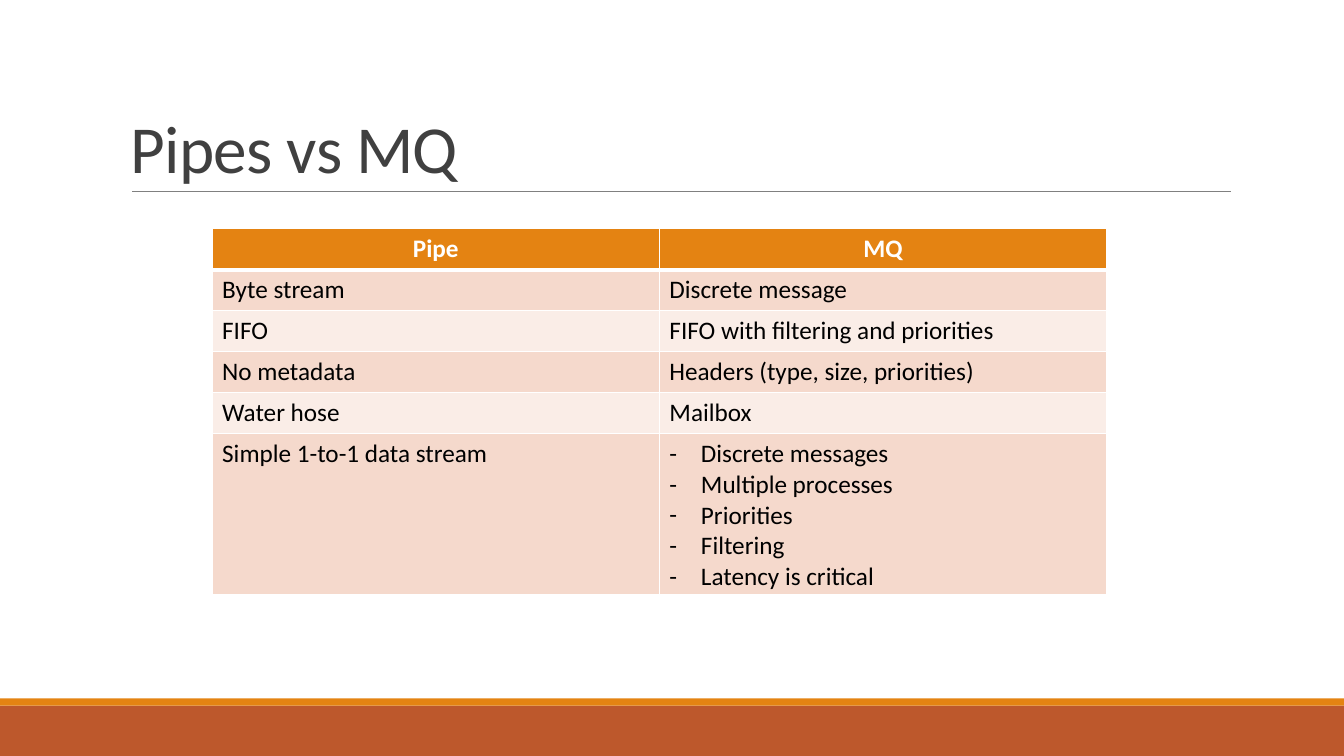
import pptx
import pptx.util
import pptx.dml.color
import pptx.enum.shapes
import pptx.enum.text
import pptx.oxml
import pptx.oxml.ns
import lxml.etree

TITLE = "Pipes vs MQ"
ROWS = [
    ("Pipe", "MQ"),
    ("Byte stream", "Discrete message"),
    ("FIFO", "FIFO with filtering and priorities"),
    ("No metadata", "Headers (type, size, priorities)"),
    ("Water hose", "Mailbox"),
    ("Simple 1-to-1 data stream",
     ["Discrete messages", "Multiple processes", "Priorities", "Filtering", "Latency is critical"]),
]
COLORS = {
    "white": "FFFFFF", "black": "000000", "title": "404040", "rule": "808080",
    "rust": "BD582C", "orange": "E48312", "dark_band": "F5D9CC", "light_band": "FAEDE7",
}
FONT = "Calibri"
PAGE_WIDTH, PAGE_HEIGHT = 1280, 720
FOOTER_BANDS = [(672, 48, "rust"), (665, 7, "orange")]
TITLE_BOX = (115, 30, 1056, 153)
RULE_LEFT, RULE_RIGHT, RULE_TOP = 126, 1172, 182
TABLE_LEFT, TABLE_TOP = 202, 218
COLUMN_WIDTH, ROW_HEIGHT, LAST_ROW_HEIGHT = 426, 39, 153
BULLET_INDENT = 30


def px(length):
    return pptx.util.Emu(length * 9525)


def color(name):
    return pptx.dml.color.RGBColor.from_string(COLORS[name])


def add_bullet(para, mark):
    properties = para._p.get_or_add_pPr()
    properties.set("marL", str(px(BULLET_INDENT)))
    properties.set("indent", str(-px(BULLET_INDENT)))
    for tag, key, value in [("a:buFont", "typeface", FONT), ("a:buChar", "char", mark)]:
        lxml.etree.SubElement(properties, pptx.oxml.ns.qn(tag)).set(key, value)


def write(frame, text, size=18, fill="black", bold=False, align=None,
          bullet=None, line_spacing=None, tracking=None):
    lines = [text] if isinstance(text, str) else text
    for index, line in enumerate(lines):
        para = frame.add_paragraph() if index else frame.paragraphs[0]
        if bullet:
            add_bullet(para, bullet)
        if align is not None:
            para.alignment = align
        if line_spacing:
            para.line_spacing = line_spacing
        span = para.add_run()
        span.text = line
        span.font.name = FONT
        span.font.size = pptx.util.Pt(size)
        span.font.bold = bold
        span.font.color.rgb = color(fill)
        if tracking:
            span._r.get_or_add_rPr().set("spc", str(int(tracking * 100)))


def set_borders(cell, widths):
    properties = cell._tc.get_or_add_tcPr()
    for index, (side, width) in enumerate(widths.items()):
        properties.insert(index, pptx.oxml.parse_xml(
            f'<a:ln{side} {pptx.oxml.ns.nsdecls("a")} w="{pptx.util.Pt(width)}">'
            f'<a:solidFill><a:srgbClr val="{COLORS["white"]}"/></a:solidFill></a:ln{side}>'))


def add_footer(page):
    for top, height, fill in FOOTER_BANDS:
        band = page.shapes.add_shape(
            pptx.enum.shapes.MSO_SHAPE.RECTANGLE, 0, px(top), px(PAGE_WIDTH), px(height))
        band.shadow.inherit = False
        band.fill.solid()
        band.fill.fore_color.rgb = color(fill)
        band.line.fill.background()


def add_title(page):
    rule = page.shapes.add_connector(
        pptx.enum.shapes.MSO_CONNECTOR.STRAIGHT,
        px(RULE_LEFT), px(RULE_TOP), px(RULE_RIGHT), px(RULE_TOP))
    rule.line.color.rgb = color("rule")
    rule.line.width = pptx.util.Pt(0.5)
    lxml.etree.SubElement(rule._element.spPr, pptx.oxml.ns.qn("a:effectLst"))
    frame = page.shapes.add_textbox(*map(px, TITLE_BOX)).text_frame
    frame.word_wrap = True
    frame.vertical_anchor = pptx.enum.text.MSO_ANCHOR.BOTTOM
    write(frame, TITLE, size=48, fill="title", line_spacing=0.85, tracking=-0.5)


def add_comparison(page):
    heights = [ROW_HEIGHT] * (len(ROWS) - 1) + [LAST_ROW_HEIGHT]
    columns = len(ROWS[0])
    table = page.shapes.add_table(
        len(ROWS), columns, px(TABLE_LEFT), px(TABLE_TOP),
        px(COLUMN_WIDTH * columns), px(sum(heights))).table
    for column in table.columns:
        column.width = px(COLUMN_WIDTH)
    for row_index, (texts, height) in enumerate(zip(ROWS, heights)):
        table.rows[row_index].height = px(height)
        header = row_index == 0
        band = "orange" if header else "dark_band" if row_index % 2 else "light_band"
        for column_index, text in enumerate(texts):
            cell = table.cell(row_index, column_index)
            cell.fill.solid()
            cell.fill.fore_color.rgb = color(band)
            set_borders(cell, {"L": 1, "R": 1, "T": 3 if row_index == 1 else 1,
                               "B": 3 if header else 1})
            write(cell.text_frame, text, bold=header,
                  fill="white" if header else "black",
                  align=pptx.enum.text.PP_ALIGN.CENTER if header else None,
                  bullet="-" if isinstance(text, list) else None)


def main():
    deck = pptx.Presentation()
    deck.slide_width, deck.slide_height = px(PAGE_WIDTH), px(PAGE_HEIGHT)
    page = deck.slides.add_slide(deck.slide_layouts[6])
    add_footer(page)
    add_title(page)
    add_comparison(page)
    deck.save("out.pptx")


if __name__ == "__main__":
    main()
